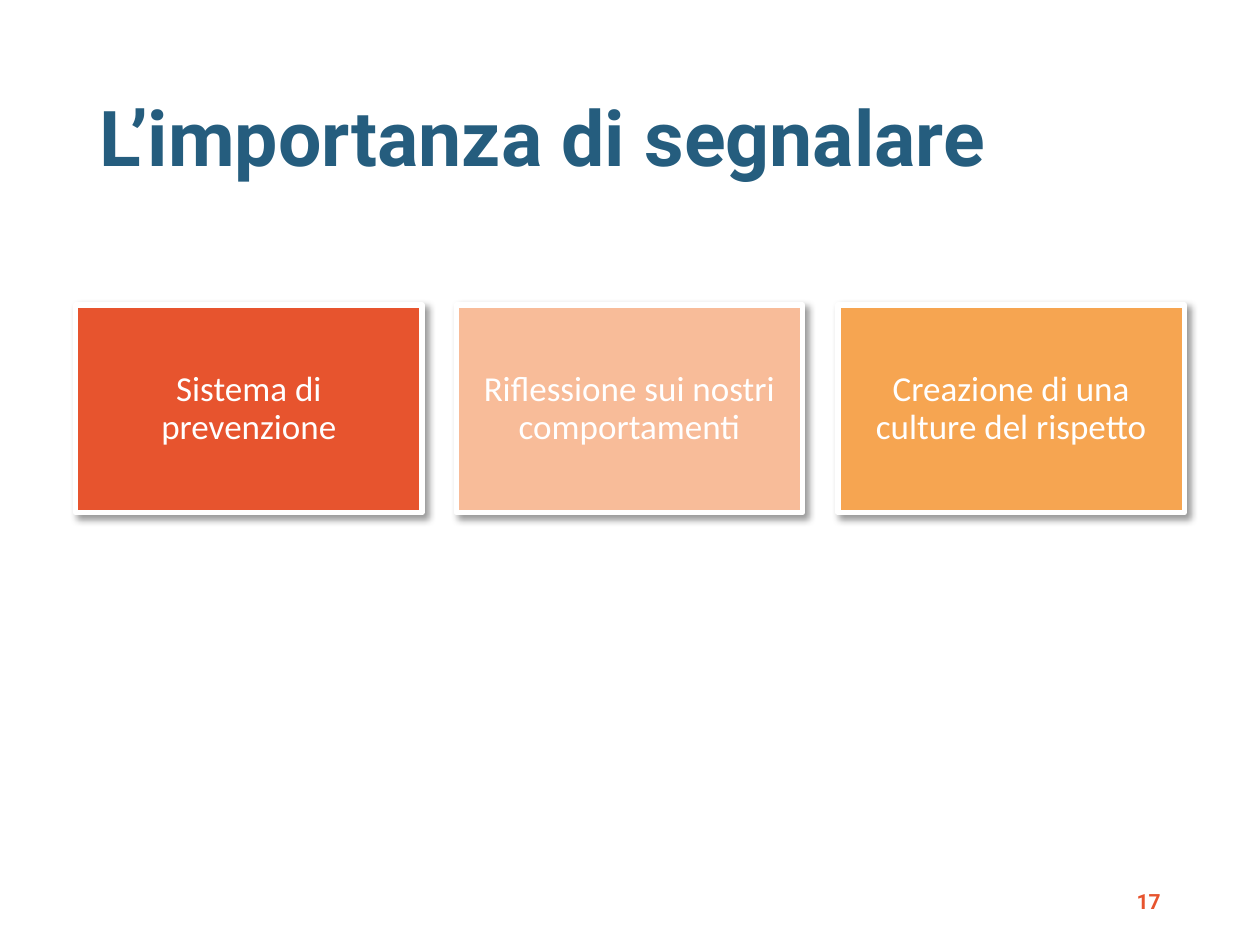
"""Builds the slide on the importance of reporting, with three reasons as cards."""

from lxml.etree import SubElement
from pptx import Presentation
from pptx.dml.color import RGBColor
from pptx.enum.shapes import MSO_SHAPE
from pptx.enum.text import MSO_ANCHOR, PP_ALIGN
from pptx.oxml.ns import qn
from pptx.util import Pt

PX = 9144
COLORS = {
    "white": "FFFFFF",
    "blue": "255D7E",
    "red": "E7542E",
    "peach": "F8BC99",
    "amber": "F6A551",
    "black": "000000",
}
CARDS = [
    ("Sistema di prevenzione", "red"),
    ("Riflessione sui nostri comportamenti", "peach"),
    ("Creazione di una culture del rispetto", "amber"),
]
CARD_LEFT, CARD_TOP, CARD_WIDTH, CARD_HEIGHT = 60, 242, 275, 165
LAST_CARD_LEFT = 665


def color(name):
    return RGBColor.from_string(COLORS[name])


def write(frame, text, *, size, ink, font="Roboto", bold=False,
          align=PP_ALIGN.LEFT, spacing=1.0, inset=None):
    frame.word_wrap = True
    frame.vertical_anchor = MSO_ANCHOR.MIDDLE
    if inset is not None:
        frame.margin_left = frame.margin_right = inset * PX
        frame.margin_top = frame.margin_bottom = inset * PX
    para = frame.paragraphs[0]
    para.alignment = align
    para.line_spacing = spacing
    span = para.add_run()
    span.text = text
    span.font.name = font
    span.font.size = Pt(size)
    span.font.bold = bold
    span.font.color.rgb = color(ink)


class SlideBuilder:
    def __init__(self, page):
        self.page = page
        self.card_style = {"size": 20, "ink": "white", "font": "Calibri",
                           "align": PP_ALIGN.CENTER, "spacing": 0.9, "inset": 8}

    def text(self, left, top, width, height, text, **style):
        box = self.page.shapes.add_textbox(left * PX, top * PX, width * PX, height * PX)
        write(box.text_frame, text, **style)

    def card(self, left, top, width, height, text, fill):
        box = self.page.shapes.add_shape(
            MSO_SHAPE.RECTANGLE, left * PX, top * PX, width * PX, height * PX)
        box.fill.solid()
        box.fill.fore_color.rgb = color(fill)
        box.line.color.rgb = color("white")
        box.line.width = Pt(3)
        self.shadow(box)
        write(box.text_frame, text, **self.card_style)

    def shadow(self, box):
        box.shadow.inherit = False
        effects = box.fill._xPr.find(qn("a:effectLst"))
        outer = SubElement(effects, qn("a:outerShdw"), blurRad=str(Pt(4)),
                           dist=str(Pt(3)), dir="2700000", algn="tl", rotWithShape="0")
        tint = SubElement(outer, qn("a:srgbClr"), val=COLORS["black"])
        SubElement(tint, qn("a:alpha"), val="40000")


def main():
    deck = Presentation()
    deck.slide_width, deck.slide_height = 1000 * PX, 750 * PX
    builder = SlideBuilder(deck.slides.add_slide(deck.slide_layouts[6]))
    builder.text(69, 40, 862, 145, "L’importanza di segnalare",
                 size=44, ink="blue", bold=True, spacing=0.9)
    builder.text(706, 695, 225, 40, "17", size=12, ink="red", bold=True,
                 align=PP_ALIGN.RIGHT)
    for index, (text, fill) in enumerate(CARDS):
        left = CARD_LEFT + index * (LAST_CARD_LEFT - CARD_LEFT) // (len(CARDS) - 1)
        builder.card(left, CARD_TOP, CARD_WIDTH, CARD_HEIGHT, text, fill)
    deck.save("out.pptx")


if __name__ == "__main__":
    main()
